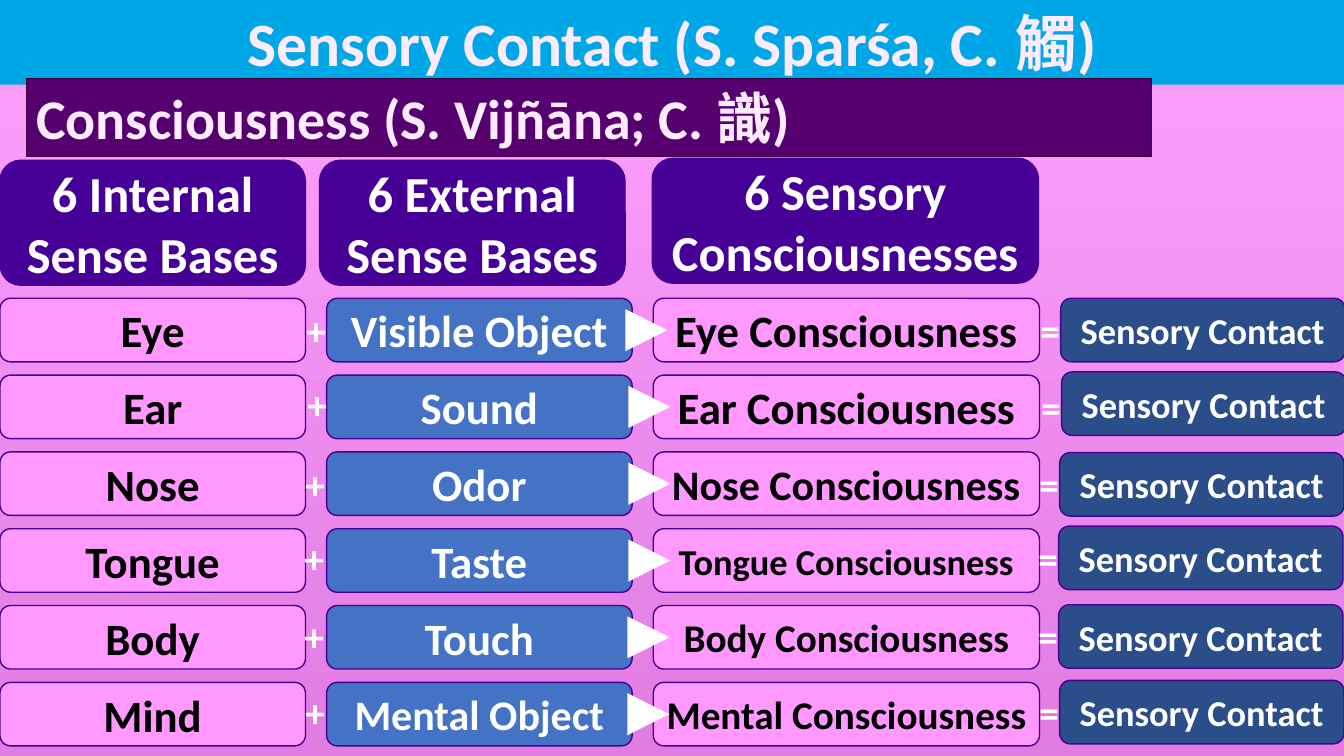
from dataclasses import dataclass

import lxml.etree
import pptx
import pptx.dml.color
import pptx.enum.dml
import pptx.enum.shapes
import pptx.enum.text
import pptx.oxml.ns
import pptx.shapes.autoshape
import pptx.shapes.base
import pptx.slide
import pptx.util

RGBColor = pptx.dml.color.RGBColor
Inches = pptx.util.Inches
Pt = pptx.util.Pt
Shapes = pptx.enum.shapes.MSO_SHAPE
Align = pptx.enum.text.PP_ALIGN
Anchor = pptx.enum.text.MSO_ANCHOR
AutoSize = pptx.enum.text.MSO_AUTO_SIZE

SKY = RGBColor(0x00, 0xA7, 0xE6)
PALE_PINK = RGBColor(0xFF, 0xEB, 0xFF)
PINK = RGBColor(0xFF, 0x99, 0xFF)
GRADIENT_TOP = RGBColor(0xFF, 0xA0, 0xFF)
GRADIENT_BOTTOM = RGBColor(0xE1, 0x7D, 0xE1)
INDIGO = RGBColor(0x46, 0x00, 0x96)
PLUM = RGBColor(0x55, 0x00, 0x6E)
PLUM_EDGE = RGBColor(0x3A, 0x00, 0x3A)
BLUE = RGBColor(0x44, 0x72, 0xC4)
NAVY = RGBColor(0x2B, 0x4D, 0x89)
WHITE = RGBColor(0xFF, 0xFF, 0xFF)
BLACK = RGBColor(0x00, 0x00, 0x00)

SLIDE_WIDTH, SLIDE_HEIGHT = 13.33, 7.5
FIRST_ROW, ROW_PITCH, ROW_HEIGHT = 2.96, 0.762, 0.63
SENSE_COLUMN, OBJECT_COLUMN, CONSCIOUSNESS_COLUMN = 0, 3.24, 6.48
BASE_WIDTH, CONSCIOUSNESS_WIDTH, CONTACT_WIDTH = 3.03, 3.83, 2.82
SIGN_WIDTH, SIGN_HEIGHT, SIGN_DROP = 0.85, 0.57, 0.03
PLUS_OFFSET, EQUALS_OFFSET = -7.81, -0.53  # from the contact box
ARROW_LENGTH = 0.18


@dataclass(frozen=True)
class Box:
    left: float
    top: float
    width: float
    height: float


@dataclass(frozen=True)
class Header:
    text: str
    box: Box


@dataclass(frozen=True)
class SenseRow:
    sense: str
    sense_object: str
    object_size: int
    consciousness: str
    consciousness_size: int
    contact_left: float
    contact_top: float
    arrow_left: float
    equals_drop: float = SIGN_DROP


HEADERS = [
    Header("6 Internal Sense Bases", Box(0, 1.59, BASE_WIDTH, 1.24)),
    Header("6 External Sense Bases", Box(3.17, 1.59, BASE_WIDTH, 1.24)),
    Header("6 Sensory Consciousnesses", Box(6.47, 1.57, CONSCIOUSNESS_WIDTH, 1.24)),
]
SENSE_ROWS = [
    SenseRow("Eye", "Visible Object", 32, "Eye Consciousness", 32, 10.52, 2.96, 6.44),
    SenseRow("Ear", "Sound", 32, "Ear Consciousness", 32, 10.53, 3.69, 6.47, 0.06),
    SenseRow("Nose", "Odor", 32, "Nose Consciousness", 30, 10.51, 4.49, 6.47),
    SenseRow("Tongue", "Taste", 32, "Tongue Consciousness", 26, 10.5, 5.22, 6.47),
    SenseRow("Body", "Touch", 32, "Body Consciousness", 28, 10.5, 6, 6.46),
    SenseRow("Mind", "Mental Object", 30, "Mental Consciousness", 28, 10.51, 6.75, 6.46),
]


def place(shape: pptx.shapes.base.BaseShape, box: Box) -> None:
    shape.left, shape.top = Inches(box.left), Inches(box.top)
    shape.width, shape.height = Inches(box.width), Inches(box.height)


def write(shape: pptx.shapes.autoshape.Shape, text: str, size: int, color: RGBColor,
          align: Align = Align.CENTER, anchor: Anchor = Anchor.MIDDLE,
          auto_size: AutoSize = AutoSize.NONE) -> None:
    frame = shape.text_frame
    frame.text = text
    frame.word_wrap = True
    frame.auto_size = auto_size
    frame.vertical_anchor = anchor
    paragraph = frame.paragraphs[0]
    paragraph.alignment = align
    paragraph.font.name = "Calibri"
    paragraph.font.size = Pt(size)
    paragraph.font.bold = True
    paragraph.font.color.rgb = color


def add_filled_shape(slide: pptx.slide.Slide, kind: Shapes, box: Box, fill: RGBColor,
                     edge: RGBColor = INDIGO, edge_width: float = 1
                     ) -> pptx.shapes.autoshape.Shape:
    shape = slide.shapes.add_shape(kind, 0, 0, 0, 0)
    place(shape, box)
    shape.shadow.inherit = False
    shape.fill.solid()
    shape.fill.fore_color.rgb = fill
    shape.line.color.rgb = edge
    shape.line.width = Pt(edge_width)
    return shape


def add_card(slide: pptx.slide.Slide, box: Box, fill: RGBColor, text: str,
             size: int, color: RGBColor = WHITE) -> None:
    shape = add_filled_shape(slide, Shapes.ROUNDED_RECTANGLE, box, fill)
    write(shape, text, size, color)


def add_sign(slide: pptx.slide.Slide, sign: str, left: float, top: float) -> None:
    text_box = slide.shapes.add_textbox(0, 0, 0, 0)
    place(text_box, Box(left, top, SIGN_WIDTH, SIGN_HEIGHT))
    write(text_box, sign, 28, WHITE, anchor=Anchor.TOP,
          auto_size=AutoSize.SHAPE_TO_FIT_TEXT)


def add_arrow(slide: pptx.slide.Slide, left: float, middle: float) -> None:
    arrow = slide.shapes.add_connector(
        pptx.enum.shapes.MSO_CONNECTOR.STRAIGHT, Inches(left), Inches(middle),
        Inches(left + ARROW_LENGTH), Inches(middle))
    arrow.line.color.rgb = WHITE
    arrow.line.width = Pt(10)
    qn = pptx.oxml.ns.qn
    lxml.etree.SubElement(arrow.line._get_or_add_ln(), qn("a:tailEnd"), type="triangle")
    lxml.etree.SubElement(arrow._element.spPr, qn("a:effectLst"))


def row_top(index: int) -> float:
    return FIRST_ROW + index * ROW_PITCH


def add_sense_row(slide: pptx.slide.Slide, index: int, row: SenseRow) -> None:
    top = row_top(index)
    add_card(slide, Box(SENSE_COLUMN, top, BASE_WIDTH, ROW_HEIGHT),
             PINK, row.sense, 32, BLACK)
    add_card(slide, Box(OBJECT_COLUMN, top, BASE_WIDTH, ROW_HEIGHT),
             BLUE, row.sense_object, row.object_size)
    add_card(slide, Box(CONSCIOUSNESS_COLUMN, top, CONSCIOUSNESS_WIDTH, ROW_HEIGHT),
             PINK, row.consciousness, row.consciousness_size, BLACK)
    add_card(slide, Box(row.contact_left, row.contact_top, CONTACT_WIDTH, ROW_HEIGHT),
             NAVY, "Sensory Contact", 26)
    add_sign(slide, "+", row.contact_left + PLUS_OFFSET, row.contact_top + SIGN_DROP)
    add_sign(slide, "=", row.contact_left + EQUALS_OFFSET,
             row.contact_top + row.equals_drop)
    add_arrow(slide, row.arrow_left, top + ROW_HEIGHT / 2)


def paint_background(slide: pptx.slide.Slide) -> None:
    fill = slide.background.fill
    fill.gradient()
    fill.gradient_angle = 270
    for stop, color in zip(fill.gradient_stops, (GRADIENT_TOP, GRADIENT_BOTTOM)):
        stop.color.rgb = color


def add_title(slide: pptx.slide.Slide) -> None:
    title = slide.shapes.title
    place(title, Box(0, 0, SLIDE_WIDTH, 0.84))
    title.fill.solid()
    title.fill.fore_color.rgb = SKY
    write(title, "Sensory Contact (S. Sparśa, C. 觸)", 44, PALE_PINK,
          anchor=Anchor.TOP, auto_size=AutoSize.SHAPE_TO_FIT_TEXT)


def add_consciousness_band(slide: pptx.slide.Slide) -> None:
    band = add_filled_shape(slide, Shapes.RECTANGLE, Box(0.26, 0.78, 11.16, 0.77),
                            PLUM, PLUM_EDGE, 0.75)
    write(band, "Consciousness (S. Vijñāna; C. 識)", 40, PALE_PINK, Align.LEFT,
          Anchor.TOP, AutoSize.SHAPE_TO_FIT_TEXT)


def main() -> None:
    presentation = pptx.Presentation()
    presentation.slide_width = Inches(SLIDE_WIDTH)
    presentation.slide_height = Inches(SLIDE_HEIGHT)
    slide = presentation.slides.add_slide(presentation.slide_layouts[5])
    paint_background(slide)
    add_title(slide)
    for header in HEADERS:
        add_card(slide, header.box, INDIGO, header.text, 36)
    for index, row in enumerate(SENSE_ROWS):
        add_sense_row(slide, index, row)
    add_consciousness_band(slide)
    presentation.save("out.pptx")


if __name__ == "__main__":
    main()
